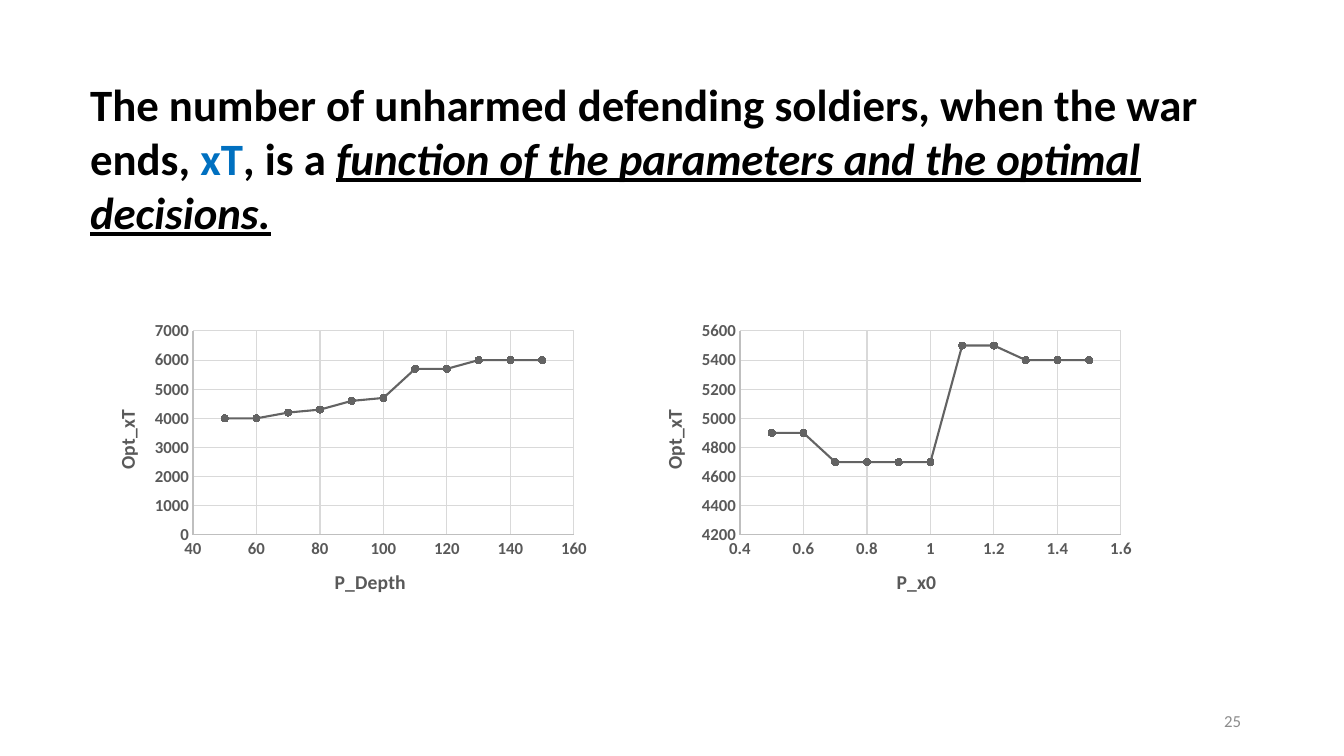
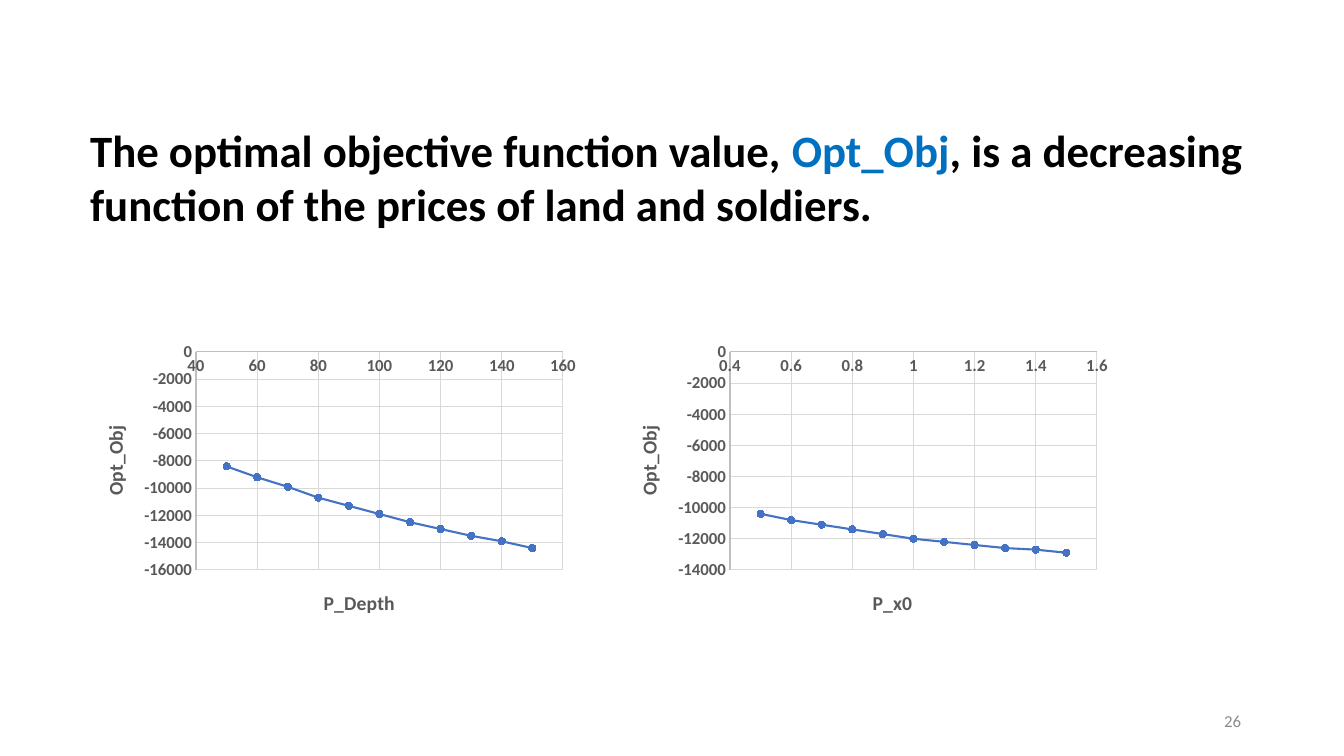
"""Build two slides on how optimal results depend on the prices of land and soldiers."""
from lxml import etree
from pptx import Presentation
from pptx import util as u
from pptx.chart import data as chart_data
from pptx.dml.color import RGBColor
from pptx.enum import chart as ch, text
from pptx.oxml.ns import qn

PX = 9071
FONT = "Calibri"
BLACK = RGBColor(0x00, 0x00, 0x00)
ACCENT = RGBColor(0x00, 0x70, 0xC0)
PAGE_GREY = RGBColor(0x8C, 0x8C, 0x8C)
LABEL_GREY = RGBColor(0x59, 0x59, 0x59)
AXIS_GREY = RGBColor(0xBF, 0xBF, 0xBF)
GRID_GREY = RGBColor(0xD9, 0xD9, 0xD9)
SERIES_GREY = RGBColor(0x63, 0x63, 0x63)
SERIES_BLUE = RGBColor(0x44, 0x72, 0xC4)

CHART_SIZE = (504, 302)
PAGE_BOX = (949, 701, 302, 40)
PRICES = {
    "P_Depth": dict(values=list(range(50, 151, 10)), scale=(40, 160, 20), title_at=(239, 250)),
    "P_x0": dict(values=[n / 10 for n in range(5, 16)], scale=(0.4, 1.6, 0.2), title_at=(254, 250)),
}

SLIDES = [
    dict(
        page="25",
        title=[("The number of unharmed defending soldiers, when the war ends, ", ""),
               ("xT", "accent"), (", is a ", ""),
               ("function of the parameters and the optimal decisions.", "stress")],
        title_box=(80, 72, 1183, 173),
        result="Opt_xT", result_at=(18, 91), color=SERIES_GREY,
        plot=(101, 16, 381, 204), chart_top=315,
        charts=[
            ("P_Depth", 92, (0, 7000, 1000),
             [4000, 4000, 4200, 4300, 4600, 4700, 5700, 5700, 6000, 6000, 6000]),
            ("P_x0", 639, (4200, 5600, 200),
             [4900, 4900, 4700, 4700, 4700, 4700, 5500, 5500, 5400, 5400, 5400]),
        ],
    ),
    dict(
        page="26",
        title=[("The optimal objective function value, ", ""), ("Opt_Obj", "accent"),
               (", is a decreasing function of the prices of land and soldiers.", "")],
        title_box=(80, 118, 1183, 119),
        result="Opt_Obj", result_at=(17, 86), color=SERIES_BLUE,
        plot=(115, 16, 367, 218), chart_top=336,
        charts=[
            ("P_Depth", 81, (-16000, 0, 2000),
             [-8400, -9200, -9900, -10700, -11300, -11900, -12500, -13000, -13500, -13900, -14400]),
            ("P_x0", 615, (-14000, 0, 2000),
             [-10400, -10800, -11100, -11400, -11700, -12000, -12200, -12400, -12600, -12700, -12900]),
        ],
    ),
]


def px(*lengths):
    return [u.Emu(length * PX) for length in lengths]


def set_font(font, size, color, bold=False):
    font.name, font.size, font.bold = FONT, u.Pt(size), bold
    font.color.rgb = color


def add_title(slide, parts, box):
    title = slide.shapes.title
    title.left, title.top, title.width, title.height = px(*box)
    frame = title.text_frame
    frame.word_wrap = True
    frame.auto_size = text.MSO_AUTO_SIZE.SHAPE_TO_FIT_TEXT
    frame.vertical_anchor = text.MSO_ANCHOR.TOP
    heading = frame.paragraphs[0]
    heading.alignment = text.PP_ALIGN.LEFT
    for words, role in parts:
        run = heading.add_run()
        run.text = words
        set_font(run.font, 32, ACCENT if role == "accent" else BLACK, True)
        if role == "stress":
            run.font.italic = run.font.underline = True


def add_page_number(slide, number):
    frame = slide.shapes.add_textbox(*px(*PAGE_BOX)).text_frame
    frame.word_wrap = True
    frame.vertical_anchor = text.MSO_ANCHOR.MIDDLE
    frame.text = number
    frame.paragraphs[0].alignment = text.PP_ALIGN.RIGHT
    set_font(frame.paragraphs[0].runs[0].font, 12, PAGE_GREY)


def place(element, box, inner=False):
    layout = element.find(qn("c:layout"))
    if layout is None:
        layout = etree.Element(qn("c:layout"))
        text_part = element.find(qn("c:tx"))
        element.insert(0 if text_part is None else element.index(text_part) + 1, layout)
    for child in list(layout):
        layout.remove(child)
    manual = etree.SubElement(layout, qn("c:manualLayout"))
    settings = [("layoutTarget", "inner")] if inner else []
    settings += [("xMode", "edge"), ("yMode", "edge")]
    settings += [(key, f"{length / CHART_SIZE[i % 2]:.4f}")
                 for i, (key, length) in enumerate(zip("xywh", box))]
    for key, value in settings:
        etree.SubElement(manual, qn("c:" + key)).set("val", value)


def style_axis(axis, name, title_at, scale):
    axis.minimum_scale, axis.maximum_scale, axis.major_unit = scale
    axis.major_tick_mark = axis.minor_tick_mark = ch.XL_TICK_MARK.NONE
    axis.has_major_gridlines = True
    for line, color in ((axis.format.line, AXIS_GREY),
                        (axis.major_gridlines.format.line, GRID_GREY)):
        line.color.rgb = color
        line.width = u.Pt(0.75)
    set_font(axis.tick_labels.font, 12, LABEL_GREY, True)
    axis.tick_labels.number_format = "General"
    axis.tick_labels.number_format_is_linked = False
    frame = axis.axis_title.text_frame
    frame.text = name
    set_font(frame.paragraphs[0].runs[0].font, 14, LABEL_GREY, True)
    place(axis.axis_title._element, title_at)


def add_price_chart(slide, content, price, left, scale, results):
    points = chart_data.XyChartData()
    curve = points.add_series("Series 1")
    for x, y in zip(PRICES[price]["values"], results):
        curve.add_data_point(x, y)
    chart = slide.shapes.add_chart(
        ch.XL_CHART_TYPE.XY_SCATTER_LINES,
        *px(left, content["chart_top"], *CHART_SIZE), points).chart
    chart.has_legend = chart.has_title = False
    set_font(chart.font, 10, BLACK)
    plot = chart.plots[0]
    plot.vary_by_categories = False
    style_axis(chart.category_axis, price, PRICES[price]["title_at"], PRICES[price]["scale"])
    style_axis(chart.value_axis, content["result"], content["result_at"], scale)
    place(chart._chartSpace.chart.plotArea, content["plot"], inner=True)
    series = plot.series[0]
    series.smooth = False
    series.format.line.color.rgb = content["color"]
    series.format.line.width = u.Pt(1.5)
    marker = series.marker
    marker.style, marker.size = ch.XL_MARKER_STYLE.CIRCLE, 5
    marker.format.fill.solid()
    marker.format.fill.fore_color.rgb = content["color"]
    marker.format.line.color.rgb = content["color"]


def main():
    deck = Presentation()
    deck.slide_width, deck.slide_height = px(1344, 756)
    for content in SLIDES:
        slide = deck.slides.add_slide(deck.slide_layouts[5])
        add_page_number(slide, content["page"])
        add_title(slide, content["title"], content["title_box"])
        for price_chart in content["charts"]:
            add_price_chart(slide, content, *price_chart)
    deck.save("out.pptx")


if __name__ == "__main__":
    main()
